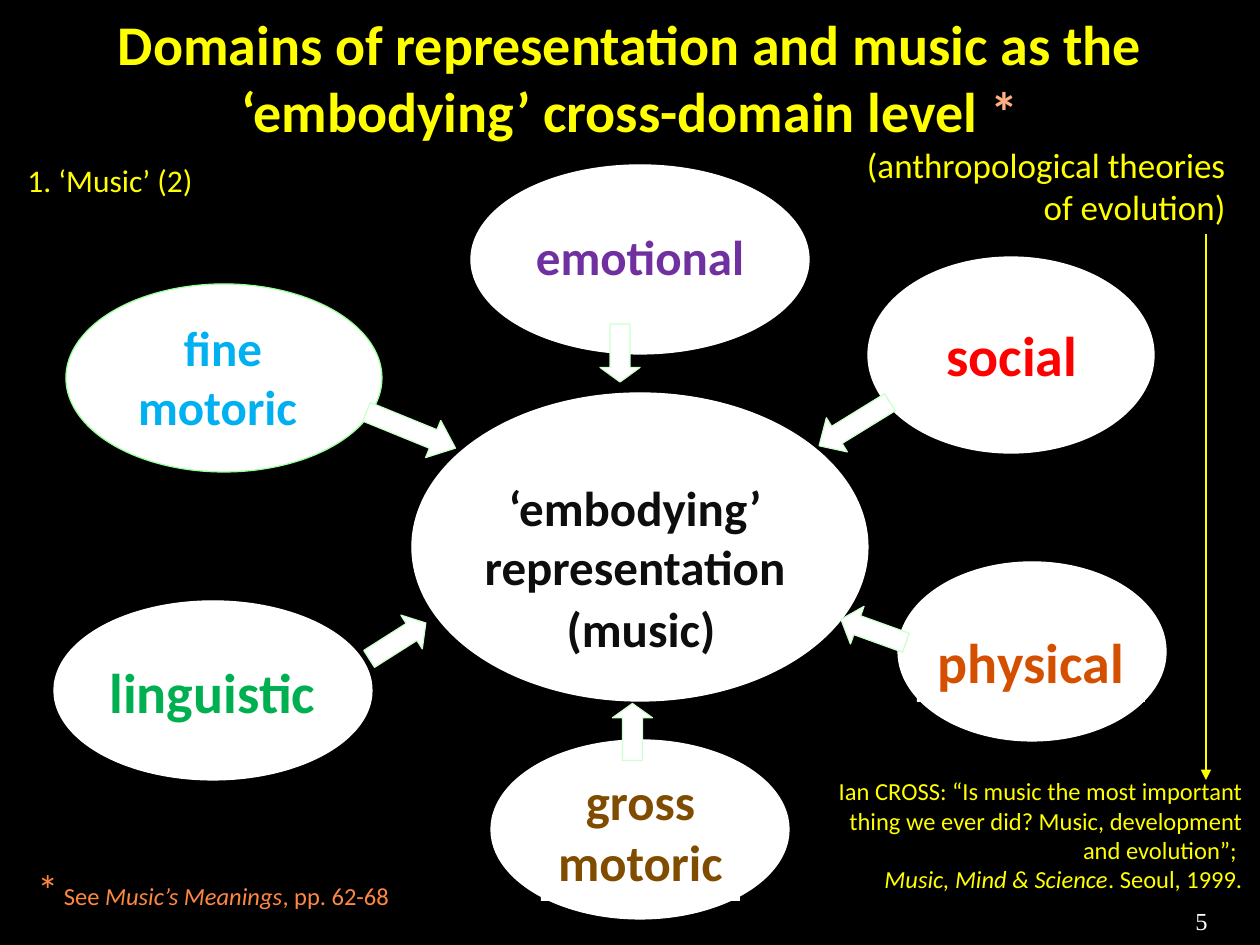
import pptx
import pptx.util
import pptx.dml.color
import pptx.enum.shapes
import pptx.enum.text
import pptx.oxml

RGB = pptx.dml.color.RGBColor
SHAPE = pptx.enum.shapes.MSO_SHAPE
ANCHOR = pptx.enum.text.MSO_ANCHOR
LEFT, CENTER, RIGHT = (pptx.enum.text.PP_ALIGN.LEFT, pptx.enum.text.PP_ALIGN.CENTER,
                       pptx.enum.text.PP_ALIGN.RIGHT)

BLACK, WHITE, YELLOW = RGB(0, 0, 0), RGB(255, 255, 255), RGB(255, 255, 0)
INK = RGB(0x0D, 0x0D, 0x0D)
PEACH, ORANGE = RGB(0xFF, 0xB0, 0x80), RGB(0xFF, 0x88, 0x40)
GREEN_EDGE, PALE_EDGE = RGB(0x99, 0xFF, 0x99), RGB(0xCC, 0xFF, 0xCC)
EMU_PER_PX = 914400 / 126

TITLE_BOX = (74, 26, 1112, 102)
TITLE = [("Domains of representation and music as the ‘embodying’ cross-domain level ", {}),
         ("*", {"color": PEACH})]

# label, size, text colour, oval box, oval outline, label box
DOMAINS = [
    ("fine\nmotoric ", 28, RGB(0, 0xB0, 0xF0), (66, 284, 316, 188), GREEN_EDGE, (124, 311, 198, 131)),
    ("emotional", 28, RGB(0x70, 0x30, 0xA0), (471, 165, 338, 189), WHITE, (491, 220, 298, 72)),
    ("social", 32, RGB(255, 0, 0), (868, 257, 286, 196), WHITE, (898, 314, 228, 81)),
    ("gross\nmotoric ", 29, RGB(0x80, 0x4C, 0), (491, 740, 298, 179), WHITE, (541, 764, 199, 137)),
    ("linguistic", 32, RGB(0, 0xB0, 0x50), (54, 601, 318, 179), WHITE, (74, 651, 277, 81)),
    ("physical", 32, RGB(0xD4, 0x50, 0), (898, 562, 268, 179), WHITE, (917, 621, 228, 81)),
]

HUB_OVAL = (412, 393, 456, 308)
HUB_LABELS = [("‘embodying’\nrepresentation", (412, 471, 446, 130)),
              ("(music)", (512, 592, 258, 72))]

# left, top, length, rotation
ARROW_WIDTH = 40
ARROWS = [(363, 410, 96, 22.2), (591, 333, 58, 90), (813, 404, 83, 148.4),
          (839, 611, 69, 199.8), (604, 712, 57, 270), (364, 621, 67, 327.6)]

# runs, box, format
NOTES = [
    ([("Ian CROSS: “Is music the most important thing we ever did? Music, development "
       "and evolution”; \n", {}),
      ("Music, Mind & Science", {"italic": True}), (". Seoul, 1999", {}), (".", {"italic": True})],
     (804, 770, 451, 131), dict(size=14, align=RIGHT)),
    ("(anthropological theories \nof evolution) ", (819, 137, 427, 97), dict(size=20, align=RIGHT)),
    ("1. ‘Music’ (2)", (15, 155, 268, 50), dict(size=18)),
    ([("*", {"size": 24}), (" See ", {}), ("Music’s Meanings", {"italic": True}), (", pp. 62-68", {})],
     (25, 857, 441, 63), dict(size=14, color=ORANGE)),
    ("5", (958, 900, 262, 63), dict(size=14, color=WHITE, align=RIGHT, font="Times New Roman")),
]
TIMELINE = (1206, 234, 1206, 780)


def px(*lengths):
    return [round(n * EMU_PER_PX) for n in lengths]


def write(shape, text, size=28, color=YELLOW, bold=False, italic=False, align=LEFT,
          font="Calibri", anchor=ANCHOR.TOP):
    """Fill a shape with a string, or with (string, format changes) runs; newlines become line breaks."""
    tf = shape.text_frame
    tf.word_wrap = True
    tf.auto_size = pptx.enum.text.MSO_AUTO_SIZE.NONE
    tf.vertical_anchor = anchor
    p = tf.paragraphs[0]
    p.alignment = align
    base = dict(size=size, color=color, bold=bold, italic=italic)
    for content, changes in [(text, {})] if isinstance(text, str) else text:
        style = {**base, **changes}
        for i, line in enumerate(content.split("\n")):
            if i:
                p.add_line_break()
            if line:
                r = p.add_run()
                r.text = line
                r.font.name = font
                r.font.size = pptx.util.Pt(style["size"])
                r.font.color.rgb = style["color"]
                r.font.bold = style["bold"]
                r.font.italic = style["italic"]


def add_white(s, kind, box, edge=None):
    sp = s.shapes.add_shape(kind, *px(*box))
    sp.shadow.inherit = False
    sp.fill.solid()
    sp.fill.fore_color.rgb = WHITE
    if edge is None:
        sp.line.fill.background()
    else:
        sp.line.color.rgb = edge
        sp.line.width = pptx.util.Pt(0.75)
    return sp


def add_timeline(s):
    line = s.shapes.add_connector(pptx.enum.shapes.MSO_CONNECTOR.STRAIGHT, *px(*TIMELINE))
    line.line.color.rgb = YELLOW
    line.line.width = pptx.util.Pt(1.5)
    ns = 'xmlns:a="http://schemas.openxmlformats.org/drawingml/2006/main"'
    line.line._get_or_add_ln().append(pptx.oxml.parse_xml(f'<a:tailEnd {ns} type="triangle"/>'))
    line._element.spPr.append(pptx.oxml.parse_xml(f"<a:effectLst {ns}/>"))


def main():
    prs = pptx.Presentation()
    prs.slide_width, prs.slide_height = px(1260, 945)
    s = prs.slides.add_slide(prs.slide_layouts[5])
    s.background.fill.solid()
    s.background.fill.fore_color.rgb = BLACK

    title = s.shapes.title
    title.left, title.top, title.width, title.height = px(*TITLE_BOX)
    write(title, TITLE, size=32, bold=True, align=CENTER, anchor=ANCHOR.MIDDLE)

    for *_, oval, edge, _ in DOMAINS:
        add_white(s, SHAPE.OVAL, oval, edge)
    for label, size, color, _, _, box in DOMAINS:
        write(add_white(s, SHAPE.RECTANGLE, box), label, size=size, color=color,
              bold=True, align=CENTER)

    add_white(s, SHAPE.OVAL, HUB_OVAL, WHITE)
    for label, box in HUB_LABELS:
        write(s.shapes.add_textbox(*px(*box)), label, color=INK, bold=True, align=CENTER)

    for left, top, length, angle in ARROWS:
        arrow = add_white(s, SHAPE.RIGHT_ARROW, (left, top, length, ARROW_WIDTH), PALE_EDGE)
        arrow.adjustments[1] = length / ARROW_WIDTH / 4
        arrow.rotation = angle

    for text, box, style in NOTES:
        write(s.shapes.add_textbox(*px(*box)), text, **style)
    add_timeline(s)
    prs.save("out.pptx")


if __name__ == "__main__":
    main()
